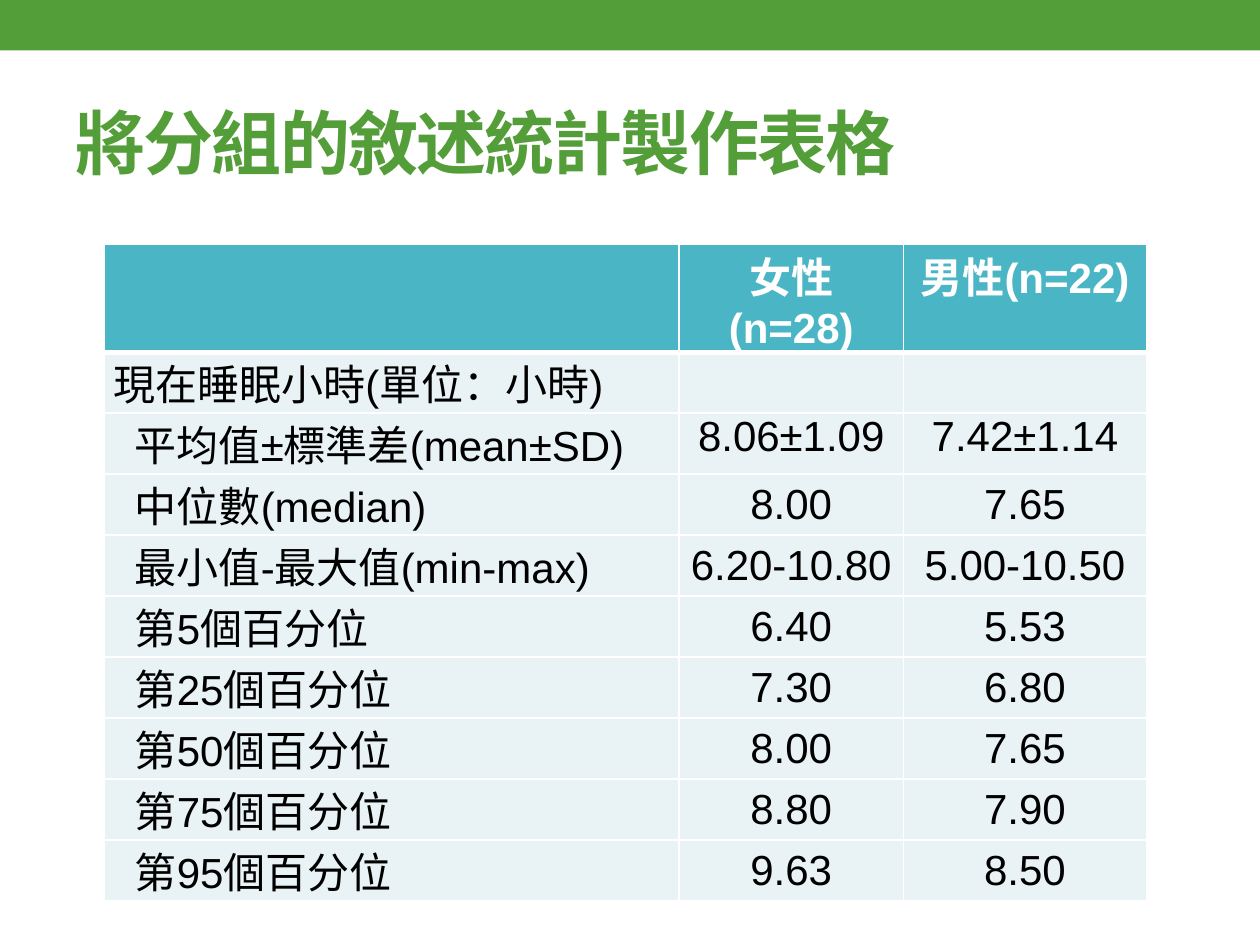
"""Build a slide with a table of grouped descriptive statistics."""
from typing import NamedTuple, Optional

from lxml import etree
from pptx import Presentation
from pptx import util as u
from pptx.dml.color import RGBColor
from pptx.enum import shapes, text
from pptx.oxml import ns

GREEN = RGBColor(0x54, 0x9E, 0x39)
TEAL = RGBColor(0x4A, 0xB5, 0xC4)
PALE = RGBColor(0xE9, 0xF3, 0xF5)
WHITE = RGBColor(0xFF, 0xFF, 0xFF)
BLACK = RGBColor(0, 0, 0)
FONT = "Arial"
COLUMN_WIDTHS = (4.56, 1.78, 1.93)
ROW_HEIGHT = 0.48


class Row(NamedTuple):
    label: str
    female: str
    male: str
    indent: float = 0.17
    anchor: text.MSO_ANCHOR = text.MSO_ANCHOR.MIDDLE


ROWS = (
    Row("", "女性(n=28)", "男性(n=22)", 0, text.MSO_ANCHOR.TOP),
    Row("現在睡眠小時(單位：小時)", "", "", 0),
    Row("平均值±標準差(mean±SD)", "8.06±1.09", "7.42±1.14", anchor=text.MSO_ANCHOR.TOP),
    Row("中位數(median)", "8.00", "7.65"),
    Row("最小值-最大值(min-max)", "6.20-10.80", "5.00-10.50"),
    Row("第5個百分位", "6.40", "5.53"),
    Row("第25個百分位", "7.30", "6.80"),
    Row("第50個百分位", "8.00", "7.65"),
    Row("第75個百分位", "8.80", "7.90"),
    Row("第95個百分位", "9.63", "8.50"),
)


def write_text(frame, content: str, *, size: float, color: RGBColor, bold: bool = False,
               align: text.PP_ALIGN = text.PP_ALIGN.LEFT, indent: float = 0,
               spacing: Optional[float] = None) -> None:
    paragraph = frame.paragraphs[0]
    paragraph.alignment = align
    if indent:
        properties = paragraph._p.get_or_add_pPr()
        properties.set("marL", "0")
        properties.set("indent", str(u.Inches(indent)))
    run = paragraph.add_run()
    run.text = content
    run.font.name = FONT
    run.font.size = u.Pt(size)
    run.font.bold = bold
    run.font.color.rgb = color
    if spacing is not None:
        run.font._element.set("spc", str(int(spacing * 100)))


def add_borders(cell, bottom: float = 1, top: float = 1) -> None:
    properties = cell._tc.get_or_add_tcPr()
    for side, width in (("L", 1), ("R", 1), ("T", top), ("B", bottom)):
        line = etree.SubElement(properties, ns.qn(f"a:ln{side}"), w=str(u.Pt(width)))
        fill = etree.SubElement(line, ns.qn("a:solidFill"))
        etree.SubElement(fill, ns.qn("a:srgbClr"), val=str(WHITE))


def fill_cell(cell, row: Row, row_index: int, column_index: int) -> None:
    header = row_index == 0
    label = column_index == 0
    add_borders(cell, bottom=3 if header else 1, top=3 if row_index == 1 else 1)
    cell.fill.solid()
    cell.fill.fore_color.rgb = TEAL if header else PALE
    content = row[column_index]
    if not content:
        return
    cell.margin_left = cell.margin_right = u.Inches(0.07)
    cell.margin_top = cell.margin_bottom = 0
    cell.vertical_anchor = text.MSO_ANCHOR.TOP if label else row.anchor
    write_text(cell.text_frame, content, size=24, bold=header,
               color=WHITE if header else BLACK,
               align=text.PP_ALIGN.LEFT if label else text.PP_ALIGN.CENTER,
               indent=row.indent if label else 0)


def add_statistics_table(slide) -> None:
    frame = slide.shapes.add_table(
        len(ROWS), len(COLUMN_WIDTHS), u.Inches(0.83), u.Inches(1.94),
        u.Inches(sum(COLUMN_WIDTHS)), u.Inches(ROW_HEIGHT * len(ROWS)))
    table = frame.table
    table.horz_banding = False
    for column, width in zip(table.columns, COLUMN_WIDTHS):
        column.width = u.Inches(width)
    for row_index, row in enumerate(ROWS):
        table.rows[row_index].height = u.Inches(ROW_HEIGHT)
        for column_index in range(len(COLUMN_WIDTHS)):
            fill_cell(table.cell(row_index, column_index), row, row_index, column_index)


def add_top_bar(slide) -> None:
    bar = slide.shapes.add_shape(shapes.MSO_SHAPE.RECTANGLE, 0, 0, u.Inches(10), u.Inches(0.4))
    bar.shadow.inherit = False
    bar.fill.solid()
    bar.fill.fore_color.rgb = GREEN
    bar.line.fill.background()


def format_title(slide) -> None:
    title = slide.shapes.title
    title.left, title.top = u.Inches(0.5), u.Inches(0.58)
    title.width, title.height = u.Inches(9), u.Inches(1.08)
    title.text_frame.vertical_anchor = text.MSO_ANCHOR.MIDDLE
    write_text(title.text_frame, "將分組的敘述統計製作表格", size=40, color=GREEN,
               bold=True, spacing=-1)


def main() -> None:
    presentation = Presentation()
    presentation.slide_width, presentation.slide_height = u.Inches(10), u.Inches(7.5)
    slide = presentation.slides.add_slide(presentation.slide_layouts[5])
    add_top_bar(slide)
    format_title(slide)
    add_statistics_table(slide)
    presentation.save("out.pptx")


if __name__ == "__main__":
    main()
